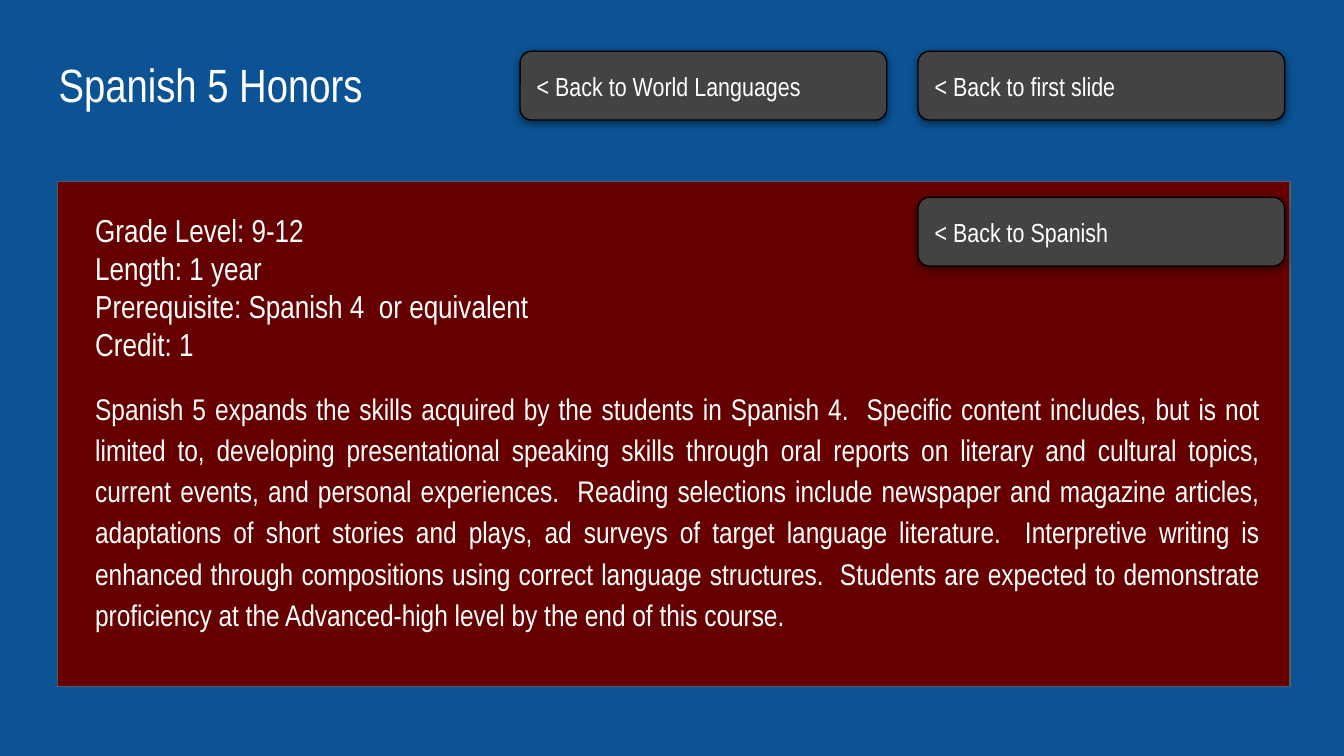
from dataclasses import dataclass

from lxml import etree
from pptx import Presentation
from pptx import util as u
from pptx.dml.color import RGBColor
from pptx.enum import shapes, text
from pptx.oxml.ns import qn


@dataclass(frozen=True)
class Theme:
    font: str = "Arial Narrow"
    background: str = "0B5394"
    panel: str = "660000"
    panel_line: str = "595959"
    button: str = "434343"
    button_line: str = "000000"
    shadow: str = "000000"
    text: str = "FFFFFF"
    title_size: float = 25
    facts_size: float = 17
    description_size: float = 16
    button_size: float = 14
    line_width: float = 0.75
    inset: float = 0.25


@dataclass(frozen=True)
class Box:
    """Position and size in centimetres."""
    left: float
    top: float
    width: float
    height: float

    def lengths(self) -> tuple:
        return tuple(u.Cm(value) for value in
                     (self.left, self.top, self.width, self.height))


@dataclass(frozen=True)
class Button:
    label: str
    left: float
    top: float


THEME = Theme()
BUTTON_WIDTH, BUTTON_HEIGHT = 6.93, 1.3
LEFT_COLUMN, RIGHT_COLUMN = 9.83, 17.35
HEADER_TOP, PANEL_BUTTON_TOP = 0.97, 3.73

HEADER_BUTTONS = [
    Button("< Back to first slide", RIGHT_COLUMN, HEADER_TOP),
    Button("< Back to World Languages", LEFT_COLUMN, HEADER_TOP),
]
PANEL_BUTTON = Button("< Back to Spanish", RIGHT_COLUMN, PANEL_BUTTON_TOP)

FACTS = [
    "Grade Level: 9-12",
    "Length: 1 year",
    "Prerequisite: Spanish 4  or equivalent",
    "Credit: 1",
]
DESCRIPTION = (
    "Spanish 5 expands the skills acquired by the students in Spanish 4.  "
    "Specific content includes, but is not limited to, developing "
    "presentational speaking skills through oral reports on literary and "
    "cultural topics, current events, and personal experiences.  Reading "
    "selections include newspaper and magazine articles, adaptations of short "
    "stories and plays, ad surveys of target language literature.  "
    "Interpretive writing is enhanced through compositions using correct "
    "language structures.  Students are expected to demonstrate proficiency "
    "at the Advanced-high level by the end of this course."
)


def format_runs(paragraph, size: float) -> None:
    for run in paragraph.runs:
        run.font.name = THEME.font
        run.font.size = u.Pt(size)
        run.font.color.rgb = RGBColor.from_string(THEME.text)


def prepare_frame(text_frame, anchor) -> None:
    text_frame.word_wrap = True
    text_frame.vertical_anchor = anchor
    inset = u.Cm(THEME.inset)
    text_frame.margin_left = text_frame.margin_right = inset
    text_frame.margin_top = text_frame.margin_bottom = inset


def add_text(slide, box: Box, content: str, size: float):
    text_frame = slide.shapes.add_textbox(*box.lengths()).text_frame
    prepare_frame(text_frame, text.MSO_ANCHOR.TOP)
    text_frame.text = content
    for paragraph in text_frame.paragraphs:
        format_runs(paragraph, size)
    return text_frame


def add_block(slide, kind, box: Box, fill: str, line: str):
    shape = slide.shapes.add_shape(kind, *box.lengths())
    shape.shadow.inherit = False
    shape.fill.solid()
    shape.fill.fore_color.rgb = RGBColor.from_string(fill)
    shape.line.color.rgb = RGBColor.from_string(line)
    shape.line.width = u.Pt(THEME.line_width)
    return shape


def add_drop_shadow(shape) -> None:
    effects = shape.element.spPr.find(qn("a:effectLst"))
    shadow = etree.SubElement(
        effects, qn("a:outerShdw"), blurRad=str(u.Pt(4.5)),
        dist=str(u.Pt(1.5)), dir="5400000", algn="bl", rotWithShape="0")
    color = etree.SubElement(shadow, qn("a:srgbClr"), val=THEME.shadow)
    etree.SubElement(color, qn("a:alpha"), val="50000")


def add_button(slide, button: Button) -> None:
    box = Box(button.left, button.top, BUTTON_WIDTH, BUTTON_HEIGHT)
    shape = add_block(slide, shapes.MSO_SHAPE.ROUNDED_RECTANGLE, box,
                      THEME.button, THEME.button_line)
    add_drop_shadow(shape)
    prepare_frame(shape.text_frame, text.MSO_ANCHOR.MIDDLE)
    shape.text_frame.text = button.label
    paragraph = shape.text_frame.paragraphs[0]
    paragraph.alignment = text.PP_ALIGN.LEFT
    format_runs(paragraph, THEME.button_size)


def main() -> None:
    presentation = Presentation()
    presentation.slide_width = u.Cm(25.4)
    presentation.slide_height = u.Cm(14.29)
    slide = presentation.slides.add_slide(presentation.slide_layouts[6])
    slide.background.fill.solid()
    slide.background.fill.fore_color.rgb = RGBColor.from_string(THEME.background)

    # Header
    add_text(slide, Box(0.86, 0.81, 23.67, 1.6), "Spanish 5 Honors",
             THEME.title_size)
    for button in HEADER_BUTTONS:
        add_button(slide, button)

    # Course panel
    add_block(slide, shapes.MSO_SHAPE.RECTANGLE, Box(1.09, 3.43, 23.29, 9.55),
              THEME.panel, THEME.panel_line)
    course = add_text(slide, Box(1.55, 3.73, 22.53, 11.4), "\n".join(FACTS),
                      THEME.facts_size)
    description = course.add_paragraph()
    description.text = DESCRIPTION
    description.alignment = text.PP_ALIGN.JUSTIFY
    description.line_spacing = 1.15
    description.space_before = u.Pt(12)
    format_runs(description, THEME.description_size)
    add_button(slide, PANEL_BUTTON)

    presentation.save("out.pptx")


if __name__ == "__main__":
    main()
